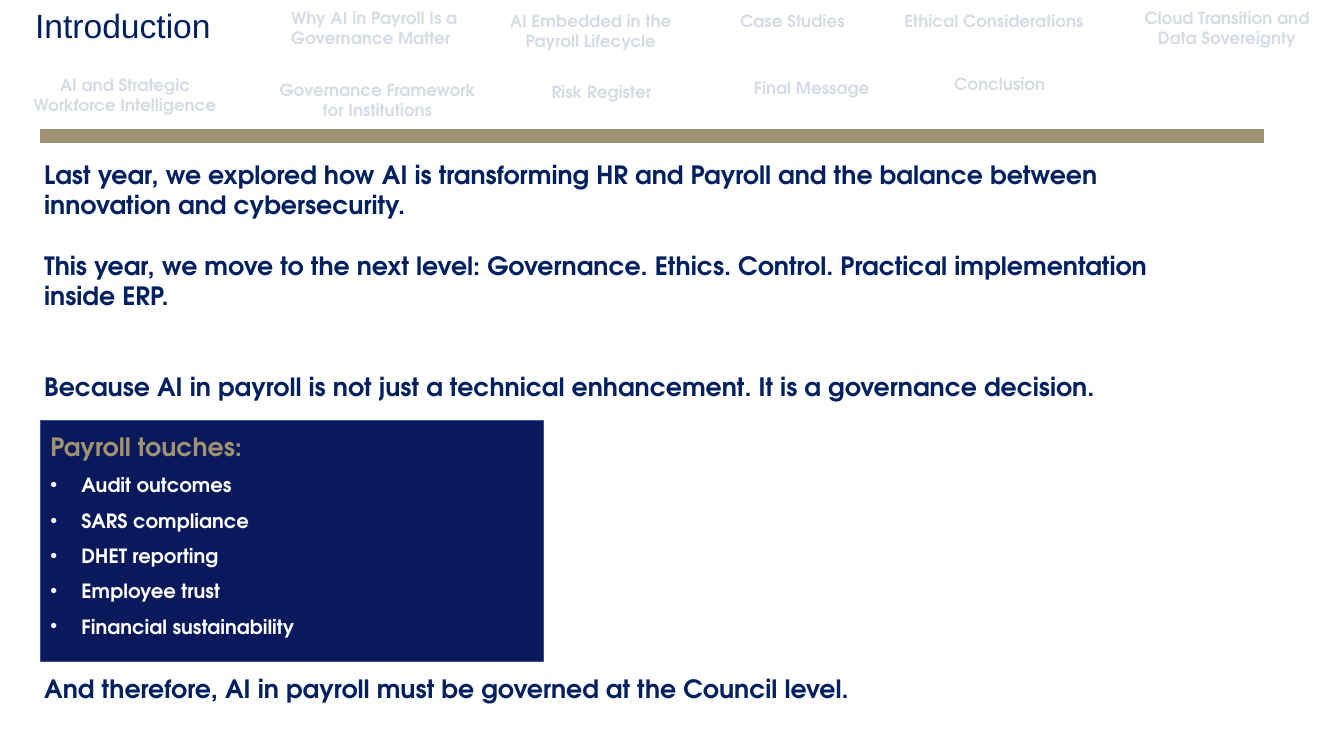
import pptx
import pptx.dml.color
import pptx.enum.shapes
import pptx.enum.text
import pptx.util
from lxml import etree
from pptx.util import Inches

HEADING_FONT = "Arial"
BODY_FONT = "TeX Gyre Adventor"
NAVY, GOLD, PALE, WHITE = "002060", "A09271", "D6DCE5", "FFFFFF"
PANEL_FILL, PANEL_EDGE = "09195C", "325491"
LEFT, CENTER = pptx.enum.text.PP_ALIGN.LEFT, pptx.enum.text.PP_ALIGN.CENTER
BODY_LINE = 21.6

AGENDA = [
    ("Why AI in Payroll Is a Governance Matter", (2.79, 0.03, 2.7, 0.81), LEFT),
    ("AI Embedded in the Payroll Lifecycle", (4.84, 0.06, 2.04, 0.81), CENTER),
    ("Case Studies", (6.84, 0.06, 2.04, 0.61), CENTER),
    ("Ethical Considerations", (8.84, 0.06, 2.04, 0.61), CENTER),
    ("Cloud Transition and Data Sovereignty", (11.15, 0.03, 2.04, 0.81), CENTER),
    ("AI and Strategic Workforce Intelligence", (0.22, 0.69, 2.04, 0.81), CENTER),
    ("Governance Framework\nfor Institutions", (2.52, 0.74, 2.45, 0.81), CENTER),
    ("Risk Register", (4.74, 0.76, 2.45, 0.3), CENTER),
    ("Final Message", (7.38, 0.72, 1.4, 0.3), LEFT),
    ("Conclusion", (8.59, 0.68, 2.65, 0.3), CENTER),
]
STATEMENTS = [
    ("Last year, we explored how AI is transforming HR and Payroll and the "
     "balance between innovation and cybersecurity.", 0),
    ("This year, we move to the next level: Governance. Ethics. Control. "
     "Practical implementation inside ERP.", 1),
    ("Because AI in payroll is not just a technical enhancement. "
     "It is a governance decision.", 2),
    ("And therefore, AI in payroll must be governed at the Council level.", 9),
]
TOUCHPOINTS = ["Audit outcomes", "SARS compliance", "DHET reporting",
               "Employee trust", "Financial sustainability"]


def color(hex_code):
    """Turn a hex string into a colour."""
    return pptx.dml.color.RGBColor.from_string(hex_code)


def style(paragraph, size, hex_code, name=BODY_FONT, bold=True):
    """Set the font of a paragraph."""
    font = paragraph.font
    font.name, font.size, font.bold = name, pptx.util.Pt(size), bold
    font.color.rgb = color(hex_code)


def add_text(slide, box, text):
    """Add a wrapping text box and return its text frame."""
    frame = slide.shapes.add_textbox(*map(Inches, box)).text_frame
    frame.word_wrap = True
    frame.text = text
    return frame


def add_block(slide, kind, box, fill, edge):
    """Add a flat filled shape with a thin outline."""
    block = slide.shapes.add_shape(kind, *map(Inches, box))
    block.shadow.inherit = False
    block.fill.solid()
    block.fill.fore_color.rgb = color(fill)
    block.line.color.rgb = color(edge)
    block.line.width = pptx.util.Pt(1)


def add_bullet(paragraph):
    """Give a paragraph a hanging round bullet."""
    properties = paragraph._p.get_or_add_pPr()
    properties.set("marL", str(Inches(0.31)))
    properties.set("indent", str(-Inches(0.31)))
    namespace = pptx.oxml.ns.qn("a:buFont"), pptx.oxml.ns.qn("a:buChar")
    etree.SubElement(properties, namespace[0], typeface="Arial")
    etree.SubElement(properties, namespace[1], char="•")


def add_header(slide, box):
    """Place the current heading, the other agenda topics and the gold rule."""
    left, top, width, height = box
    add_block(slide, pptx.enum.shapes.MSO_SHAPE.MATH_MINUS,
              (left - 1.78, top + 1.09, width + 3.17, 0.52), GOLD, GOLD)
    heading = add_text(slide, (left + 0.25, top, 2.47, 0.5), "Introduction")
    style(heading.paragraphs[0], 24, NAVY, HEADING_FONT, False)
    for topic, (x, y, topic_width, topic_height), alignment in AGENDA:
        frame = add_text(slide, (left + x, top + y, topic_width, topic_height), topic)
        for paragraph in frame.paragraphs:
            paragraph.alignment = alignment
            style(paragraph, 12, PALE)


def add_statements(slide, box):
    """Place the statements, spaced by whole lines of body text."""
    frame = add_text(slide, box, "\n".join(text for text, gap in STATEMENTS))
    for paragraph, (text, gap) in zip(frame.paragraphs, STATEMENTS):
        if gap:
            paragraph.space_before = pptx.util.Pt(gap * BODY_LINE)
        style(paragraph, 18, NAVY)


def add_touchpoints(slide, box):
    """Place the navy panel listing what payroll touches."""
    left, top, width, height = box
    add_block(slide, pptx.enum.shapes.MSO_SHAPE.FLOWCHART_PROCESS, box,
              PANEL_FILL, PANEL_EDGE)
    frame = add_text(slide, (left, top + 0.06, width + 0.29, height + 0.08),
                     "\n".join(["Payroll touches:", *TOUCHPOINTS]))
    title, *items = frame.paragraphs
    style(title, 18, GOLD)
    for item in items:
        item.line_spacing = 1.5
        add_bullet(item)
        style(item, 14, WHITE)


def main():
    """Build the introduction slide."""
    deck = pptx.Presentation()
    deck.slide_width, deck.slide_height = Inches(13.33), Inches(7.5)
    slide = deck.slides.add_slide(deck.slide_layouts[6])
    add_header(slide, (0, 0, 13.33, 1.5))
    add_statements(slide, (0.34, 1.53, 11.59, 5.55))
    add_touchpoints(slide, (0.4, 4.17, 4.99, 2.39))
    deck.save("out.pptx")


if __name__ == "__main__":
    main()
